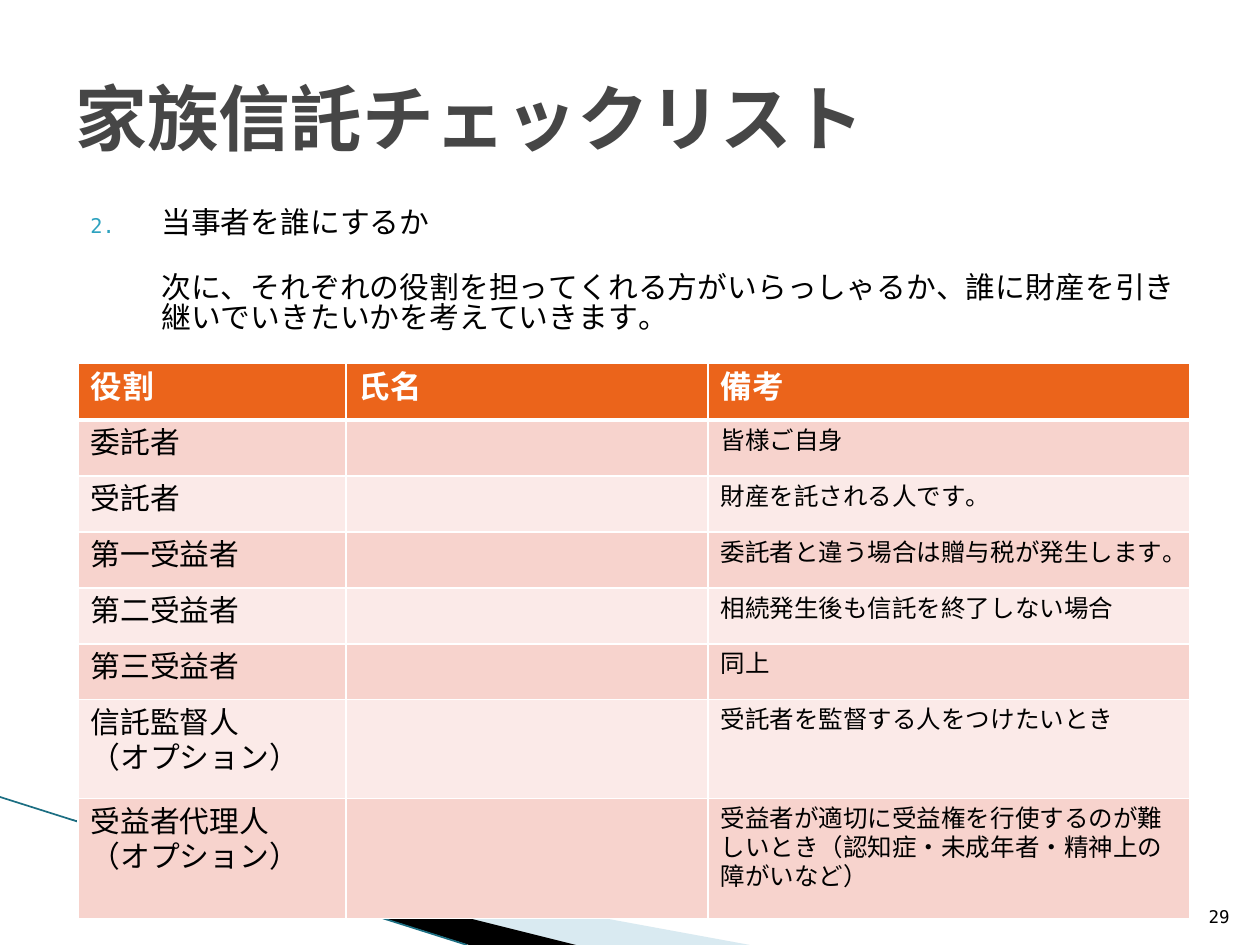
import pptx
import pptx.dml.color
import pptx.enum.shapes
import pptx.enum.text
import pptx.oxml.ns
import pptx.util
from lxml import etree

PX = 914400 // 126
FONT = "DejaVu Sans Mono"
qn = pptx.oxml.ns.qn
MIDDLE = pptx.enum.text.MSO_ANCHOR.MIDDLE
BOTTOM = pptx.enum.text.MSO_ANCHOR.BOTTOM


def rgb(value):
    return pptx.dml.color.RGBColor.from_string(value)


def write(text_frame, lines, size, color="000000", bold=False):
    """Fill a text frame with one paragraph per line, all in one style."""
    text_frame.word_wrap = True
    text_frame.text = "\n".join(lines)
    for paragraph in text_frame.paragraphs:
        for run in paragraph.runs:
            run.font.name = FONT
            run.font.size = pptx.util.Pt(size)
            run.font.bold = bold
            run.font.color.rgb = rgb(color)
            etree.SubElement(run.font._element, qn("a:ea"), typeface=FONT)


presentation = pptx.Presentation()
presentation.slide_width = 1260 * PX
presentation.slide_height = 945 * PX
slide = presentation.slides.add_slide(presentation.slide_layouts[6])
shapes = slide.shapes

# Corner decoration
wedges = [
    ("A0CBDC", 40, [(69, 820), (750, 945), (575, 945), (69, 819)]),
    ("000000", 100, [(67, 818), (576, 945), (469, 945), (68, 819)]),
]
for color, opacity, points in wedges:
    builder = shapes.build_freeform(*points[0], scale=PX)
    builder.add_line_segments(points[1:], close=True)
    wedge = builder.convert_to_shape()
    wedge.shadow.inherit = False
    wedge.fill.solid()
    wedge.fill.fore_color.rgb = rgb(color)
    wedge.line.fill.background()
    color_element = wedge._element.spPr.find(".//" + qn("a:srgbClr"))
    etree.SubElement(color_element, qn("a:alpha"), val=str(opacity * 1000))

edge = shapes.add_connector(
    pptx.enum.shapes.MSO_CONNECTOR.STRAIGHT, 0, 797 * PX, 467 * PX, 945 * PX)
edge.line.color.rgb = rgb("1B6E82")
edge.line.width = pptx.util.Pt(0.95)
etree.SubElement(edge._element.spPr, qn("a:effectLst"))

# Title, introduction and page number
title = shapes.add_textbox(63 * PX, 38 * PX, 1134 * PX, 158 * PX)
write(title.text_frame, ["家族信託チェックリスト"], 41, "464646", True)
title.text_frame.vertical_anchor = MIDDLE

body = shapes.add_textbox(63 * PX, 204 * PX, 1134 * PX, 156 * PX)
write(body.text_frame, [
    "当事者を誰にするか",
    "次に、それぞれの役割を担ってくれる方がいらっしゃるか、誰に財産を引き継いでいきたいかを考えていきます。",
], 17)
heading, explanation = body.text_frame.paragraphs
for paragraph, indent in ((heading, -71), (explanation, 0)):
    paragraph.line_spacing = 0.83
    properties = paragraph._p.get_or_add_pPr()
    properties.set("marL", str(86 * PX))
    properties.set("indent", str(indent * PX))
explanation.space_before = pptx.util.Pt(20)
properties = heading._p.get_or_add_pPr()
bullet_color = etree.SubElement(properties, qn("a:buClr"))
etree.SubElement(bullet_color, qn("a:srgbClr"), val="2DA2BF")
etree.SubElement(properties, qn("a:buSzPct"), val="68000")
etree.SubElement(properties, qn("a:buAutoNum"), type="arabicPeriod", startAt="2")

page_number = shapes.add_textbox(1192 * PX, 883 * PX, 50 * PX, 50 * PX)
write(page_number.text_frame, ["29"], 10)
page_number.text_frame.vertical_anchor = BOTTOM
page_number.text_frame.paragraphs[0].alignment = pptx.enum.text.PP_ALIGN.RIGHT

# Table of roles
rows = [
    (["役割"], ["氏名"], ["備考"]),
    (["委託者"], [], ["皆様ご自身"]),
    (["受託者"], [], ["財産を託される人です。"]),
    (["第一受益者"], [], ["委託者と違う場合は贈与税が発生します。"]),
    (["第二受益者"], [], ["相続発生後も信託を終了しない場合"]),
    (["第三受益者"], [], ["同上"]),
    (["信託監督人", "（オプション）"], [], ["受託者を監督する人をつけたいとき"]),
    (["受益者代理人", "（オプション）"], [],
     ["受益者が適切に受益権を行使するのが難しいとき（認知症・未成年者・精神上の障がいなど）"]),
]
column_widths = [268, 362, 482]
row_heights = [57] + [56] * 5 + [99, 120]
table = shapes.add_table(
    len(rows), len(column_widths), 78 * PX, 363 * PX,
    sum(column_widths) * PX, sum(row_heights) * PX).table
for column, width in zip(table.columns, column_widths):
    column.width = width * PX
for row, height in zip(table.rows, row_heights):
    row.height = height * PX

for row_index, row in enumerate(rows):
    for column_index, lines in enumerate(row):
        cell = table.cell(row_index, column_index)
        if row_index == 0:
            fill, style = "EB641B", (18, "FFFFFF", True)
        else:
            fill = "F7D3CD" if row_index % 2 else "FBEAE8"
            style = (14 if column_index == 2 else 17,)
        write(cell.text_frame, lines, *style)
        cell_properties = cell._tc.get_or_add_tcPr()
        for side in ("lnL", "lnR", "lnT", "lnB"):
            under_header = (row_index, side) in ((0, "lnB"), (1, "lnT"))
            width = pptx.util.Pt(3 if under_header else 1)
            border = etree.SubElement(cell_properties, qn("a:" + side), w=str(width))
            border_fill = etree.SubElement(border, qn("a:solidFill"))
            etree.SubElement(border_fill, qn("a:srgbClr"), val="FFFFFF")
        cell.fill.solid()
        cell.fill.fore_color.rgb = rgb(fill)

presentation.save("out.pptx")
